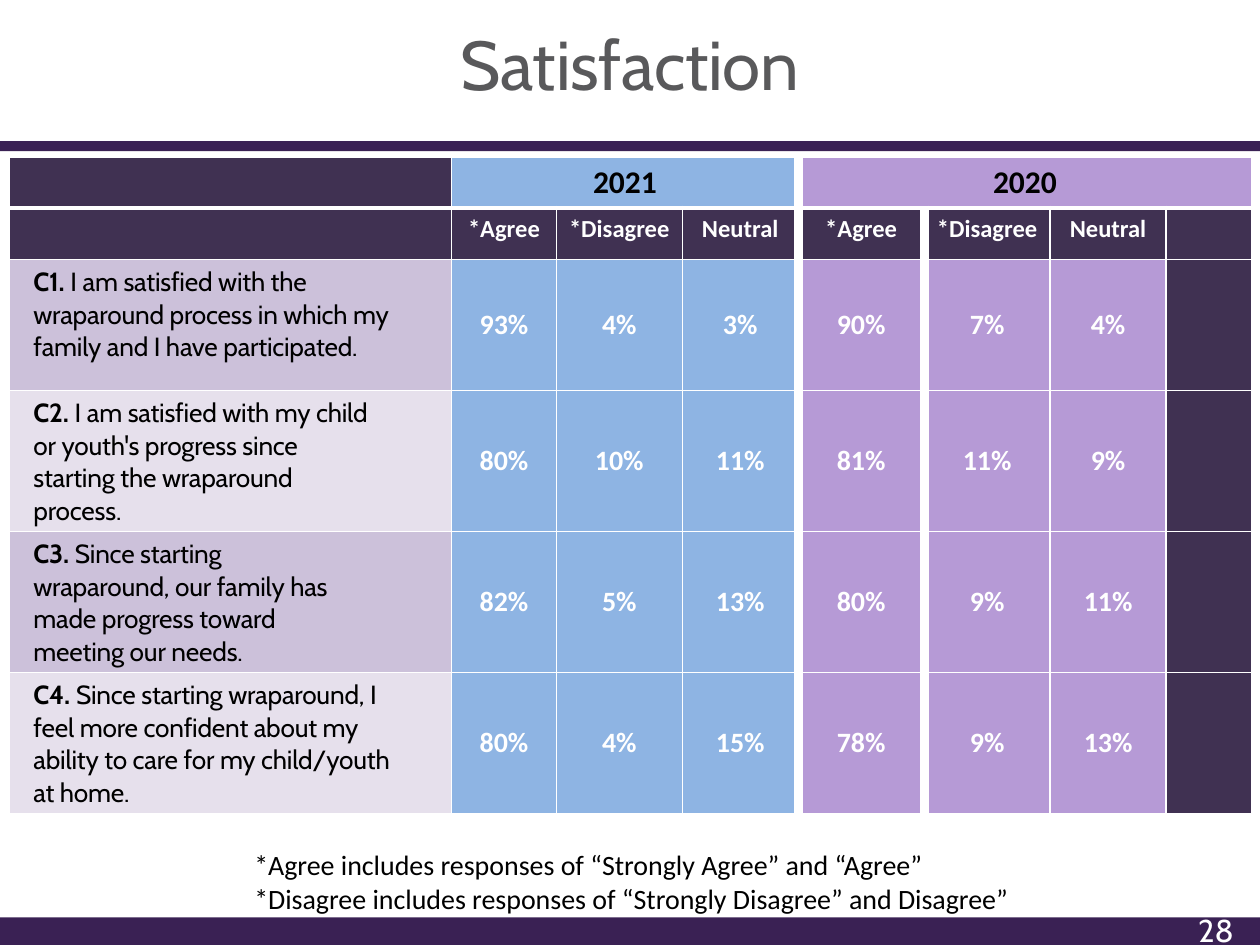
import dataclasses
import typing

import lxml.etree
import pptx
import pptx.dml.color
import pptx.enum.shapes
import pptx.enum.text
import pptx.oxml.ns
import pptx.util

ALIGN = pptx.enum.text.PP_ALIGN
ANCHOR = pptx.enum.text.MSO_ANCHOR
PLUM, DARK, BLUE, LILAC = "3A2154", "403152", "8EB4E3", "B69AD6"
WHITE, BLACK, GREY = "FFFFFF", "000000", "59595B"
STRIPES = ("CCC1DA", "E6E0EC")
COLUMNS = (35.1, 8.3, 10, 9.2, 10, 10, 9.2, 6.8)
ROWS = (3.9, 4.1, 10.4, 11.1, 11.1, 11.1)
WIDE_GAP_COLUMNS = (3, 4)
ANSWERS = ("*Agree", "*Disagree", "Neutral")


@dataclasses.dataclass(frozen=True)
class Place:
    left: float
    top: float
    width: float
    height: float


@dataclasses.dataclass(frozen=True)
class Style:
    size: float
    color: str
    font: str = "Calibri"
    bold: bool = False
    spacing: int = 0


@dataclasses.dataclass(frozen=True)
class Statement:
    code: str
    wording: str
    shares_2021: tuple[str, ...]
    shares_2020: tuple[str, ...]
    right_indent: float
    before: float = 2.6


STATEMENTS = (
    Statement("C1. ", "I am satisfied with the wraparound process in which my family "
              "and I have participated.", ("93%", "4%", "3%"), ("90%", "7%", "4%"), 2.5),
    Statement("C2. ", "I am satisfied with my child or youth's progress since starting "
              "the wraparound process.", ("80%", "10%", "11%"), ("81%", "11%", "9%"), 5, 4.3),
    Statement("C3. ", "Since starting wraparound, our family has made progress toward "
              "meeting our needs.", ("82%", "5%", "13%"), ("80%", "9%", "11%"), 8),
    Statement("C4. ", "Since starting wraparound, I feel more confident about my ability "
              "to care for my child/youth at home.", ("80%", "4%", "15%"),
              ("78%", "9%", "13%"), 2.5),
)
FOOTNOTES = ("*Agree includes responses of “Strongly Agree” and “Agree”",
             "*Disagree includes responses of “Strongly Disagree” and Disagree”")


def grid(units: float) -> int:
    return pptx.util.Inches(units / 10)


def box(place: Place) -> tuple[int, ...]:
    return tuple(grid(side) for side in dataclasses.astuple(place))


def paint(fill: typing.Any, color: str) -> None:
    fill.solid()
    fill.fore_color.rgb = pptx.dml.color.RGBColor.from_string(color)


def write(paragraph: typing.Any, text: str, style: Style) -> None:
    run = paragraph.add_run()
    run.text = text
    run.font.name, run.font.size = style.font, pptx.util.Pt(style.size)
    run.font.bold = style.bold
    run.font.color.rgb = pptx.dml.color.RGBColor.from_string(style.color)
    if style.spacing:
        run.font._element.set("spc", str(style.spacing))


def set_insets(frame: typing.Any, top: float = 0) -> None:
    frame.margin_left = frame.margin_right = frame.margin_bottom = 0
    frame.margin_top = grid(top)


def add_bar(slide: typing.Any, place: Place) -> None:
    bar = slide.shapes.add_shape(pptx.enum.shapes.MSO_SHAPE.RECTANGLE, *box(place))
    bar.shadow.inherit = False
    paint(bar.fill, PLUM)
    bar.line.fill.background()


def add_frame(slide: typing.Any, place: Place) -> typing.Any:
    frame = slide.shapes.add_textbox(*box(place)).text_frame
    frame.word_wrap = True
    return frame


def edge_cell(cell: typing.Any, widths: dict[str, float]) -> None:
    properties = cell._tc.get_or_add_tcPr()
    for order, (side, points) in enumerate(widths.items()):
        line = lxml.etree.Element(pptx.oxml.ns.qn(f"a:ln{side}"), w=str(pptx.util.Pt(points)))
        solid = lxml.etree.SubElement(line, pptx.oxml.ns.qn("a:solidFill"))
        lxml.etree.SubElement(solid, pptx.oxml.ns.qn("a:srgbClr"), val=WHITE)
        properties.insert(order, line)


def cell_color(row: int, column: int) -> str:
    if row == 0:
        return DARK if column == 0 else BLUE if column < 4 else LILAC
    if row == 1 or column == 7:
        return DARK
    if column == 0:
        return STRIPES[row % 2]
    return BLUE if column < 4 else LILAC


def format_cells(table: typing.Any) -> None:
    def gap(row: int, column: int) -> float:
        wide = column in WIDE_GAP_COLUMNS and (row > 0 or column == 3)
        return 6 if wide else 1

    for row in range(len(ROWS)):
        for column in range(len(COLUMNS)):
            cell = table.cell(row, column)
            paint(cell.fill, cell_color(row, column))
            edge_cell(cell, {"L": gap(row, column - 1), "R": gap(row, column),
                             "T": 3 if row == 1 else 1, "B": 3 if row == 0 else 1})


def fill_cell(cell: typing.Any, text: str, style: Style, anchor: typing.Any) -> None:
    cell.vertical_anchor = anchor
    paragraph = cell.text_frame.paragraphs[0]
    paragraph.alignment = ALIGN.CENTER
    write(paragraph, text, style)


def fill_statement(cell: typing.Any, statement: Statement) -> None:
    paragraph = cell.text_frame.paragraphs[0]
    indents = paragraph._p.get_or_add_pPr()
    indents.set("marL", str(grid(0.9)))
    indents.set("marR", str(grid(statement.right_indent)))
    paragraph.line_spacing = 1.02
    paragraph.space_before = pptx.util.Pt(statement.before)
    write(paragraph, statement.code, Style(15, BLACK, "Cabin", True, -10))
    write(paragraph, statement.wording, Style(15, BLACK, "Cabin", spacing=-10))


def add_results(slide: typing.Any) -> None:
    place = Place(0.75, 12.5, sum(COLUMNS), sum(ROWS))
    table = slide.shapes.add_table(len(ROWS), len(COLUMNS), *box(place)).table
    table.first_row = table.horz_banding = False
    for column, width in zip(table.columns, COLUMNS):
        column.width = grid(width)
    for row, height in zip(table.rows, ROWS):
        row.height = grid(height)
    format_cells(table)
    for year, first, last in (("2021", 1, 3), ("2020", 4, 7)):
        table.cell(0, first).merge(table.cell(0, last))
        fill_cell(table.cell(0, first), year, Style(18, BLACK, bold=True), ANCHOR.TOP)
    for column, answer in enumerate(ANSWERS * 2, 1):
        fill_cell(table.cell(1, column), answer, Style(14, WHITE, bold=True), ANCHOR.TOP)
    for row, statement in enumerate(STATEMENTS, 2):
        fill_statement(table.cell(row, 0), statement)
        for column, share in enumerate(statement.shares_2021 + statement.shares_2020, 1):
            fill_cell(table.cell(row, column), share, Style(16, WHITE, bold=True),
                      ANCHOR.MIDDLE)


def add_heading(slide: typing.Any) -> None:
    heading = slide.shapes.title
    heading.left, heading.top, heading.width, heading.height = box(Place(5.2, -2.1, 89.6, 10.4))
    frame = heading.text_frame
    set_insets(frame, 3.8)
    frame.vertical_anchor = ANCHOR.TOP
    frame.auto_size = pptx.enum.text.MSO_AUTO_SIZE.NONE
    frame.paragraphs[0].alignment = ALIGN.CENTER
    write(frame.paragraphs[0], "Satisfaction", Style(39.5, GREY, "Cabin", spacing=-10))


def add_page_number(slide: typing.Any) -> None:
    frame = add_frame(slide, Place(94.7, 72.8, 3.4, 2.5))
    set_insets(frame)
    paragraph = frame.paragraphs[0]
    paragraph._p.get_or_add_pPr().set("marL", str(grid(0.4)))
    paragraph.line_spacing = pptx.util.Pt(18.1)
    write(paragraph, "28", Style(18, WHITE, "Cabin"))


def add_footnotes(slide: typing.Any) -> None:
    frame = add_frame(slide, Place(19.2, 66.8, 71.7, 6.4))
    for order, footnote in enumerate(FOOTNOTES):
        paragraph = frame.add_paragraph() if order else frame.paragraphs[0]
        write(paragraph, footnote, Style(16, BLACK))


def main() -> None:
    deck = pptx.Presentation()
    deck.slide_width, deck.slide_height = grid(100), grid(75)
    slide = deck.slides.add_slide(deck.slide_layouts[5])
    add_bar(slide, Place(0, 72.8, 100, 2.2))
    add_bar(slide, Place(0, 11.2, 100, 0.8))
    add_heading(slide)
    add_page_number(slide)
    add_results(slide)
    add_footnotes(slide)
    deck.save("out.pptx")


if __name__ == "__main__":
    main()
